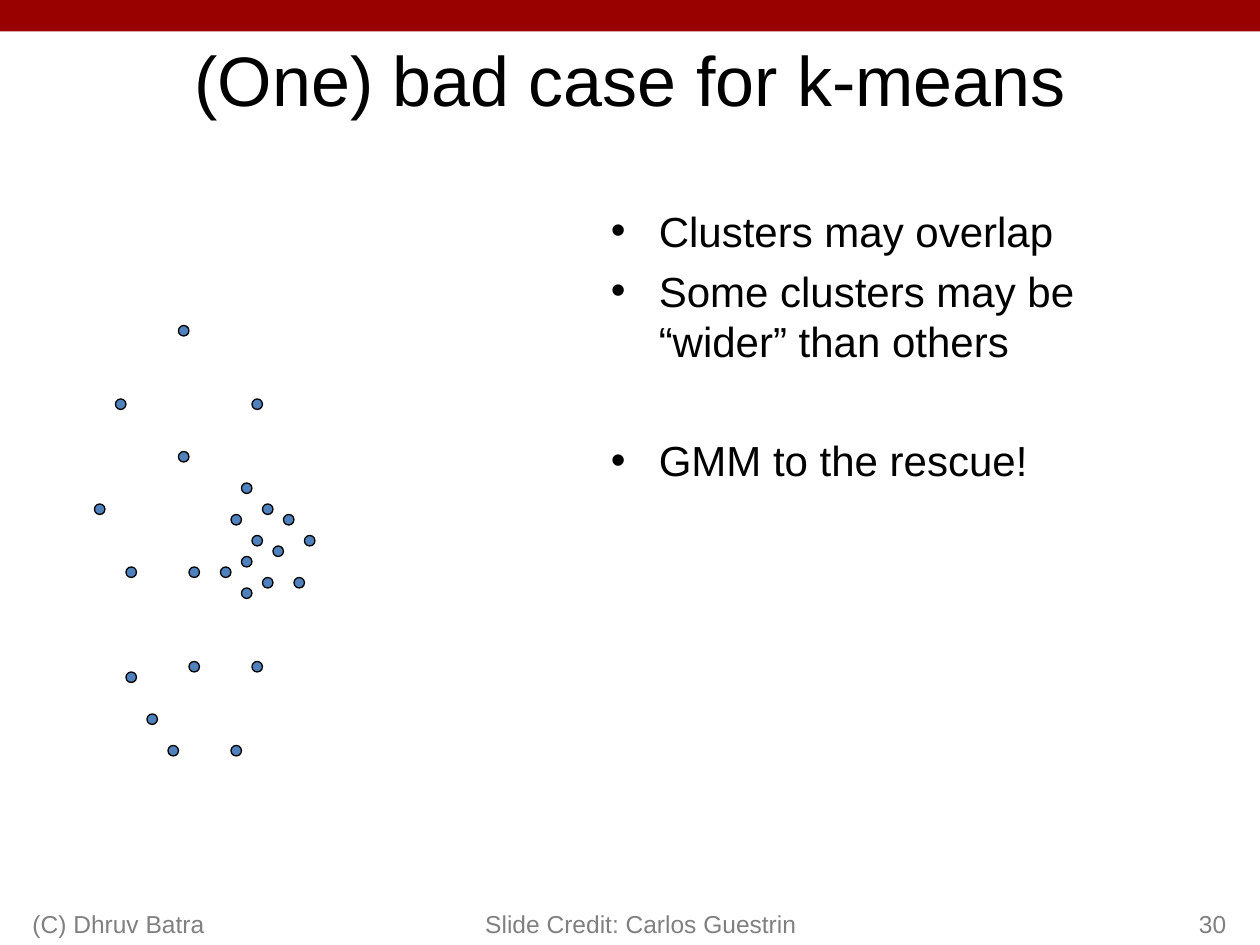
import pptx
import pptx.util
import pptx.dml.color
import pptx.enum.shapes
import pptx.enum.text
import pptx.oxml
import pptx.oxml.ns

Inches, Pt = pptx.util.Inches, pptx.util.Pt
SHAPE = pptx.enum.shapes.MSO_SHAPE
ALIGN = pptx.enum.text.PP_ALIGN
ANCHOR = pptx.enum.text.MSO_ANCHOR

COLORS = {"band": "990000", "dot": "4F81BD", "ink": "000000", "footer": "808080"}
FONT = "Arial"

TITLE = "(One) bad case for k-means"
# text, space before in points
BULLETS = [
    ("Clusters may overlap", 5.5),
    ("Some clusters may be “wider” than others", 5.5),
    ("GMM to the rescue!", 39),
]
# text, left, width, alignment
FOOTERS = [
    ("Slide Credit: Carlos Guestrin", 3.5, 2.92, ALIGN.RIGHT),
    ("(C) Dhruv Batra", 0.16, 3.17, ALIGN.LEFT),
    ("30", 7.75, 2.08, ALIGN.RIGHT),
]
# Column and row of each data point, in grid steps
GRID = 1 / 12
WIDE_CLUSTER = [
    (17, 31), (11, 38), (24, 38), (17, 43), (9, 48), (12, 54), (18, 54),
    (24, 63), (18, 63), (12, 64), (14, 68), (22, 71), (16, 71),
]
TIGHT_CLUSTER = [
    (23, 46), (25, 48), (22, 49), (27, 49), (24, 51), (29, 51),
    (26, 52), (23, 53), (21, 54), (25, 55), (28, 55), (23, 56),
]


def rgb(name):
    return pptx.dml.color.RGBColor.from_string(COLORS[name])


def add_shape(s, kind, box, fill, line=None):
    sp = s.shapes.add_shape(kind, *map(Inches, box))
    sp.shadow.inherit = False
    sp.fill.solid()
    sp.fill.fore_color.rgb = rgb(fill)
    if line:
        sp.line.color.rgb = rgb(line)
        sp.line.width = Pt(0.75)
    else:
        sp.line.fill.background()


def add_text(s, lines, box, size, color, align, anchor):
    """Add a wrapping text box with one paragraph per line; return its paragraphs."""
    tf = s.shapes.add_textbox(*map(Inches, box)).text_frame
    tf.word_wrap = True
    tf.vertical_anchor = anchor
    tf.text = "\n".join(lines)
    for p in tf.paragraphs:
        p.alignment = align
        for r in p.runs:
            r.font.name, r.font.size = FONT, Pt(size)
            r.font.color.rgb = rgb(color)
    return tf.paragraphs


def set_bullet(p, indent=0.38):
    pPr = p._p.get_or_add_pPr()
    pPr.set("marL", str(Inches(indent)))
    pPr.set("indent", str(-Inches(indent)))
    ns = pptx.oxml.ns.nsdecls("a")
    pPr.append(pptx.oxml.parse_xml(f'<a:buFont {ns} typeface="{FONT}"/>'))
    pPr.append(pptx.oxml.parse_xml(f'<a:buChar {ns} char="•"/>'))


def main():
    prs = pptx.Presentation()
    prs.slide_width, prs.slide_height = Inches(10), Inches(7.5)
    s = prs.slides.add_slide(prs.slide_layouts[6])

    add_shape(s, SHAPE.RECTANGLE, (0, 0, 10, 0.25), "band")
    add_text(s, [TITLE], (0.75, 0.25, 8.5, 0.75), 40, "ink", ALIGN.CENTER, ANCHOR.MIDDLE)

    for col, row in WIDE_CLUSTER + TIGHT_CLUSTER:
        add_shape(s, SHAPE.OVAL, (col * GRID, row * GRID, GRID, GRID), "dot", "ink")

    paragraphs = add_text(s, [text for text, _ in BULLETS], (4.75, 1.58, 4.75, 5.75),
                          24, "ink", ALIGN.LEFT, ANCHOR.TOP)
    for p, (_, space) in zip(paragraphs, BULLETS):
        p.space_before = Pt(space)
        set_bullet(p)

    for text, left, width, align in FOOTERS:
        add_text(s, [text], (left, 7, width, 0.5), 14, "footer", align, ANCHOR.BOTTOM)

    prs.save("out.pptx")


if __name__ == "__main__":
    main()
